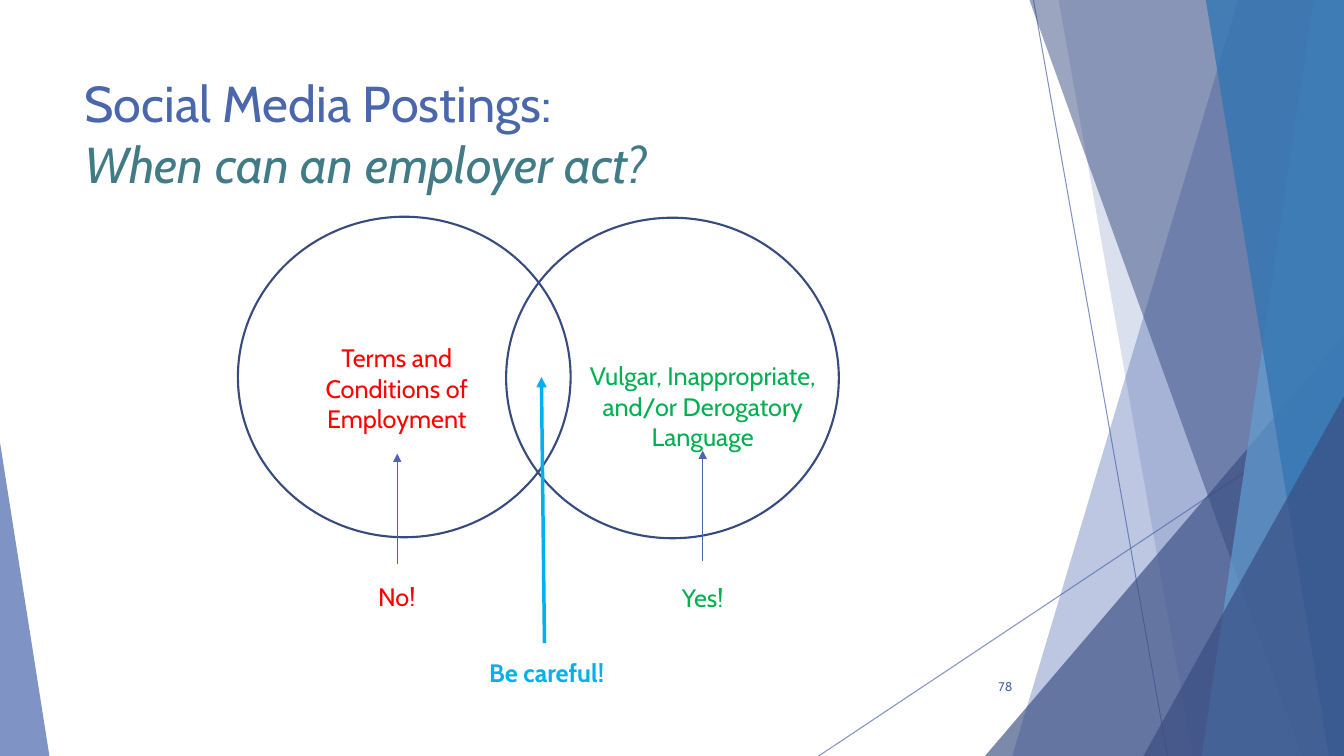
"""Builds the slide on when an employer can act on social media postings."""
from dataclasses import dataclass

from lxml import etree
from pptx import Presentation
from pptx.dml.color import RGBColor
from pptx.enum.shapes import MSO_CONNECTOR as Connector, MSO_SHAPE as Shape
from pptx.enum.text import MSO_ANCHOR as Anchor, PP_ALIGN as Align
from pptx.oxml.ns import qn
from pptx.util import Inches, Pt


@dataclass(frozen=True)
class Theme:
    font: str = "Cabin"
    title_size: int = 36
    label_size: int = 18
    number_size: int = 9
    blue: str = "4A66AC"
    navy: str = "384C81"
    sky: str = "629DD1"
    ocean: str = "3477B2"
    outline: str = "374B7F"
    teal: str = "417B85"
    red: str = "FF0000"
    green: str = "00B050"
    cyan: str = "00B0F0"


THEME = Theme()
WIDTH, HEIGHT = 13.33, 7.5

RAYS = [((10.25, 0), (11.58, HEIGHT)), ((WIDTH, 4.03), (8.12, HEIGHT))]
FACETS = [
    {"band": (12.28, 10.04), "color": THEME.blue, "alpha": 36},
    {"band": (10.5, 11.83), "color": THEME.blue, "alpha": 20},
    {"wedge": (9.77, 3.33, 3.56), "apex": 1, "color": THEME.navy, "alpha": 66},
    {"band": (10.21, 12.91), "color": THEME.navy, "alpha": 50},
    {"band": (13.03, 11.92), "color": THEME.sky, "alpha": 70},
    {"band": (11.96, 13.18), "color": THEME.ocean, "alpha": 80},
    {"wedge": (11.34, 3.93, 1.99), "apex": 1, "color": THEME.navy, "alpha": 66},
    {"wedge": (0, 4.39, 0.49), "apex": 0, "color": THEME.blue, "alpha": 70},
]
TITLE = [
    ("Social Media Postings:", {"color": THEME.blue}),
    ("When can an employer act?", {"color": THEME.teal, "italic": True}),
]
TITLE_BOX = (0.74, 0.67, 9.4, 1.44)
CIRCLES = [(2.36, 2.15, 3.3, 3.18), (5.02, 2.16, 3.3, 3.18)]
LABELS = [
    ("No!", (2.98, 5.72, 1.91, 1.32), {"color": THEME.red}),
    ("Vulgar, Inappropriate, and/or Derogatory Language",
     (5.52, 3.53, 2.9, 1.14), {"color": THEME.green}),
    ("Terms and Conditions of Employment",
     (2.98, 3.35, 1.91, 1.32), {"color": THEME.red}),
    ("Yes!", (5.52, 5.73, 2.9, 0.86), {"color": THEME.green}),
    ("Be careful! ", (3.52, 6.47, 3.86, 0.53), {"color": THEME.cyan, "bold": True}),
]
ARROWS = [
    ((3.94, 5.6), (3.94, 4.5), THEME.blue, 1),
    ((6.97, 5.57), (6.97, 4.47), THEME.blue, 1),
    ((5.4, 6.38), (5.37, 3.74), THEME.cyan, 2.5),
]
PAGE_NUMBER, PAGE_NUMBER_BOX = "78", (9.39, 6.61, 0.75, 0.4)


def inches(values):
    return [Inches(value) for value in values]


def set_alpha(holder, percent):
    for color in holder.iter(qn("a:srgbClr")):
        etree.SubElement(color, qn("a:alpha"), val=str(percent * 1000))


def add_line(shapes, start, end, color, weight):
    line = shapes.add_connector(Connector.STRAIGHT, *inches(start + end))
    line.line.color.rgb = RGBColor.from_string(color)
    line.line.width = Pt(weight)
    properties = line._element.spPr
    etree.SubElement(properties, qn("a:effectLst"))
    return properties


def add_facet(shapes, facet):
    if "band" in facet:
        top_x, bottom_x = facet["band"]
        corners = [inches(corner) for corner in
                   [(top_x, 0), (WIDTH, 0), (WIDTH, HEIGHT), (bottom_x, HEIGHT)]]
        builder = shapes.build_freeform(*corners[0], scale=1.0)
        builder.add_line_segments(corners[1:], close=True)
        pane = builder.convert_to_shape()
    else:
        left, top, width = facet["wedge"]
        pane = shapes.add_shape(Shape.ISOSCELES_TRIANGLE,
                                *inches((left, top, width, HEIGHT - top)))
        pane.adjustments[0] = facet["apex"]
    pane.shadow.inherit = False
    pane.fill.solid()
    pane.fill.fore_color.rgb = RGBColor.from_string(facet["color"])
    pane.line.fill.background()
    set_alpha(pane._element.spPr, facet["alpha"])


def add_text(shapes, box, lines, size, align, anchor=Anchor.TOP):
    frame = shapes.add_textbox(*inches(box)).text_frame
    frame.word_wrap = True
    frame.vertical_anchor = anchor
    paragraph = frame.paragraphs[0]
    paragraph.alignment = align
    for index, (words, look) in enumerate(lines):
        if index:
            paragraph.add_line_break()
        run = paragraph.add_run()
        run.text = words
        style = {"name": THEME.font, "size": Pt(size), **look}
        run.font.color.rgb = RGBColor.from_string(style.pop("color"))
        for attribute, value in style.items():
            setattr(run.font, attribute, value)


def main():
    deck = Presentation()
    deck.slide_width, deck.slide_height = inches((WIDTH, HEIGHT))
    shapes = deck.slides.add_slide(deck.slide_layouts[6]).shapes

    for start, end in RAYS:
        set_alpha(add_line(shapes, start, end, THEME.blue, 0.75), 70)
    for facet in FACETS:
        add_facet(shapes, facet)

    add_text(shapes, TITLE_BOX, TITLE, THEME.title_size, Align.LEFT)
    for box in CIRCLES:
        circle = shapes.add_shape(Shape.OVAL, *inches(box))
        circle.shadow.inherit = False
        circle.fill.background()
        circle.line.color.rgb = RGBColor.from_string(THEME.outline)
        circle.line.width = Pt(1.5)
    for words, box, look in LABELS:
        add_text(shapes, box, [(words, look)], THEME.label_size, Align.CENTER)
    for start, end, color, weight in ARROWS:
        properties = add_line(shapes, start, end, color, weight)
        etree.SubElement(properties.find(qn("a:ln")), qn("a:tailEnd"), type="triangle")
    add_text(shapes, PAGE_NUMBER_BOX, [(PAGE_NUMBER, {"color": THEME.blue})],
             THEME.number_size, Align.RIGHT, Anchor.MIDDLE)

    deck.save("out.pptx")


if __name__ == "__main__":
    main()
